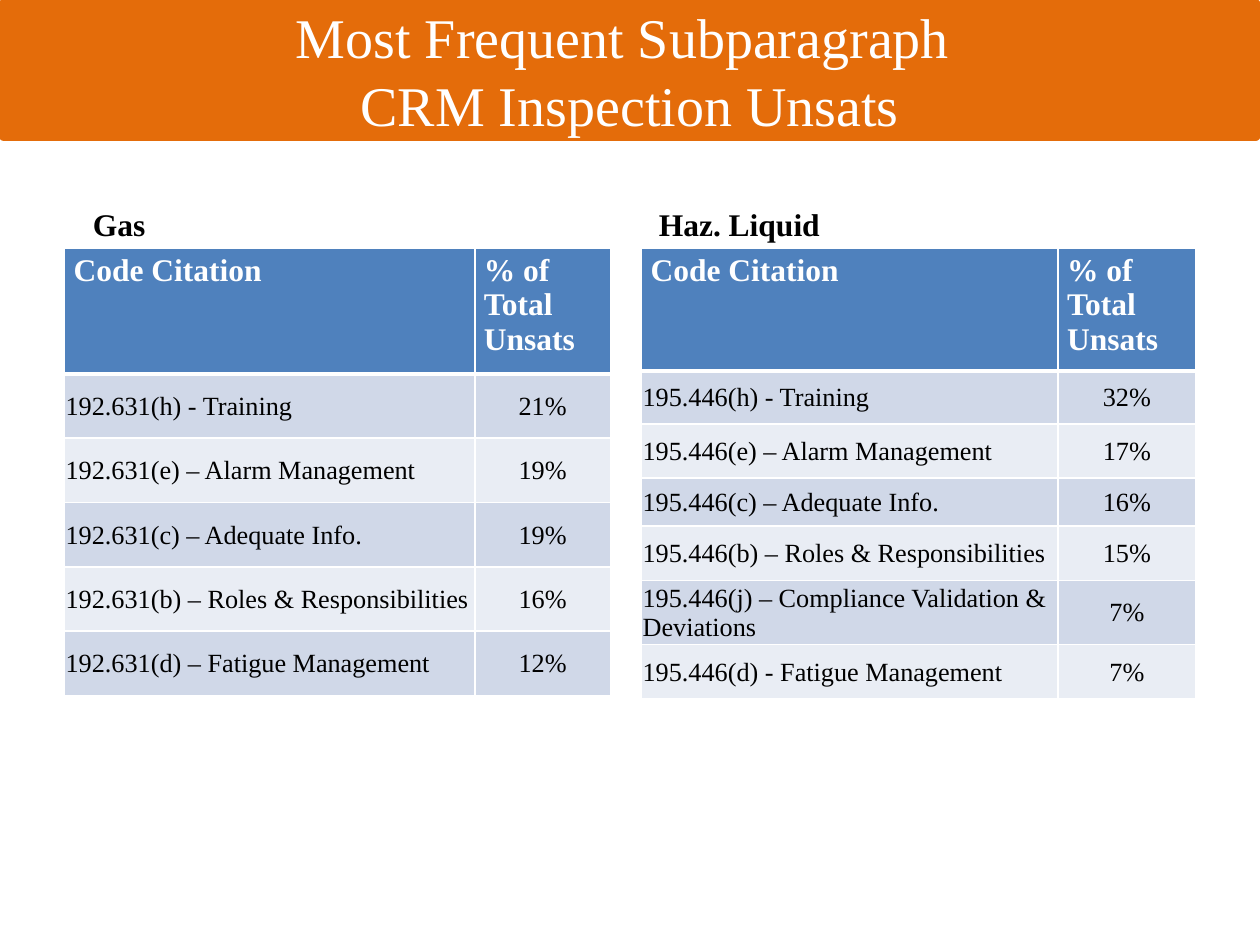
from lxml import etree
from pptx import Presentation
from pptx import util as u
from pptx.dml.color import RGBColor
from pptx.enum import text as t
from pptx.oxml.ns import qn

Pt = u.Pt
FACE = "Times New Roman"
WHITE, BLACK = "FFFFFF", "000000"
ORANGE, BLUE = "E46C0A", "4F81BD"
BANDS = ("D0D8E8", "E9EDF4")
LEFT, MID = t.PP_ALIGN.LEFT, t.PP_ALIGN.CENTER

GAS = [
    ("192.631(h) - Training", "21%"),
    ("192.631(e) – Alarm Management", "19%"),
    ("192.631(c) – Adequate Info.", "19%"),
    ("192.631(b) – Roles & Responsibilities", "16%"),
    ("192.631(d) – Fatigue Management", "12%"),
]
LIQUID = [
    ("195.446(h) - Training", "32%"),
    ("195.446(e) – Alarm Management", "17%"),
    ("195.446(c) – Adequate Info.", "16%"),
    ("195.446(b) – Roles & Responsibilities", "15%"),
    ("195.446(j) – Compliance Validation & Deviations", "7%"),
    ("195.446(d) - Fatigue Management", "7%"),
]


def tint(code):
    return RGBColor.from_string(code)


def paint(thing, code):
    thing.fill.solid()
    thing.fill.fore_color.rgb = tint(code)


def write(frame, lines, size, code, bold=False, align=LEFT):
    for i, line in enumerate(lines):
        para = frame.paragraphs[0] if i == 0 else frame.add_paragraph()
        para.alignment = align
        run = para.add_run()
        run.text = line
        font = run.font
        font.name, font.size, font.bold = FACE, Pt(size), bold
        font.color.rgb = tint(code)


def banner(slide, lines):
    title = slide.shapes.title
    title.left, title.top = Pt(2.4), Pt(3)
    title.width, title.height = Pt(715), Pt(74)
    paint(title, ORANGE)
    title.line.color.rgb = tint(ORANGE)
    title.line.width = Pt(6.75)
    frame = title.text_frame
    frame.auto_size = t.MSO_AUTO_SIZE.NONE
    frame.vertical_anchor = t.MSO_ANCHOR.MIDDLE
    write(frame, lines, 32, WHITE, align=MID)


def label(slide, words, left, top, width, height):
    box = slide.shapes.add_textbox(Pt(left), Pt(top), Pt(width), Pt(height))
    frame = box.text_frame
    frame.word_wrap = True
    frame.vertical_anchor = t.MSO_ANCHOR.BOTTOM
    write(frame, [words], 18, BLACK, True)


def edge(cell, top, base):
    props = cell._tc.get_or_add_tcPr()
    sides = (("L", 1), ("R", 1), ("T", top), ("B", base))
    for i, (side, width) in enumerate(sides):
        line = etree.Element(qn("a:ln" + side), w=str(Pt(width)))
        fill = etree.SubElement(line, qn("a:solidFill"))
        etree.SubElement(fill, qn("a:srgbClr"), val=WHITE)
        props.insert(i, line)


def inset(cell, side, top, base):
    cell.margin_left = cell.margin_right = Pt(side)
    cell.margin_top, cell.margin_bottom = Pt(top), Pt(base)


def grid(slide, left, top, cols, rows, data):
    full = [("Code Citation", "% of Total Unsats")] + data
    frame = slide.shapes.add_table(
        len(rows), len(cols), Pt(left), Pt(top), Pt(sum(cols)), Pt(sum(rows)))
    table = frame.table
    for col, width in zip(table.columns, cols):
        col.width = Pt(width)
    for r, (row, height) in enumerate(zip(table.rows, rows)):
        row.height = Pt(height)
        for c, words in enumerate(full[r]):
            cell = table.cell(r, c)
            if r == 0:
                paint(cell, BLUE)
                inset(cell, 5.2, 2.6, 2.6)
                write(cell.text_frame, [words], 18, WHITE, True)
            else:
                paint(cell, BANDS[(r - 1) % 2])
                inset(cell, 0.6, 0.6, 0)
                cell.vertical_anchor = t.MSO_ANCHOR.MIDDLE
                write(cell.text_frame, [words], 15, BLACK,
                      align=MID if c else LEFT)
            edge(cell, 3 if r == 1 else 1, 3 if r == 0 else 1)


def main():
    deck = Presentation()
    deck.slide_width, deck.slide_height = Pt(720), Pt(540)
    slide = deck.slides.add_slide(deck.slide_layouts[5])
    label(slide, "Gas", 46, 113.5, 304.5, 29)
    label(slide, "Haz. Liquid", 369.4, 119, 286.5, 23.5)
    grid(slide, 366.6, 142, (238, 78.7),
         (69.7, 30.3, 31, 27.3, 31.2, 36.6, 31), LIQUID)
    grid(slide, 36.9, 142, (234.4, 77.5), [71.7] + [36.75] * 5, GAS)
    banner(slide, ["Most Frequent Subparagraph ", "CRM Inspection Unsats"])
    deck.save("out.pptx")


if __name__ == "__main__":
    main()
